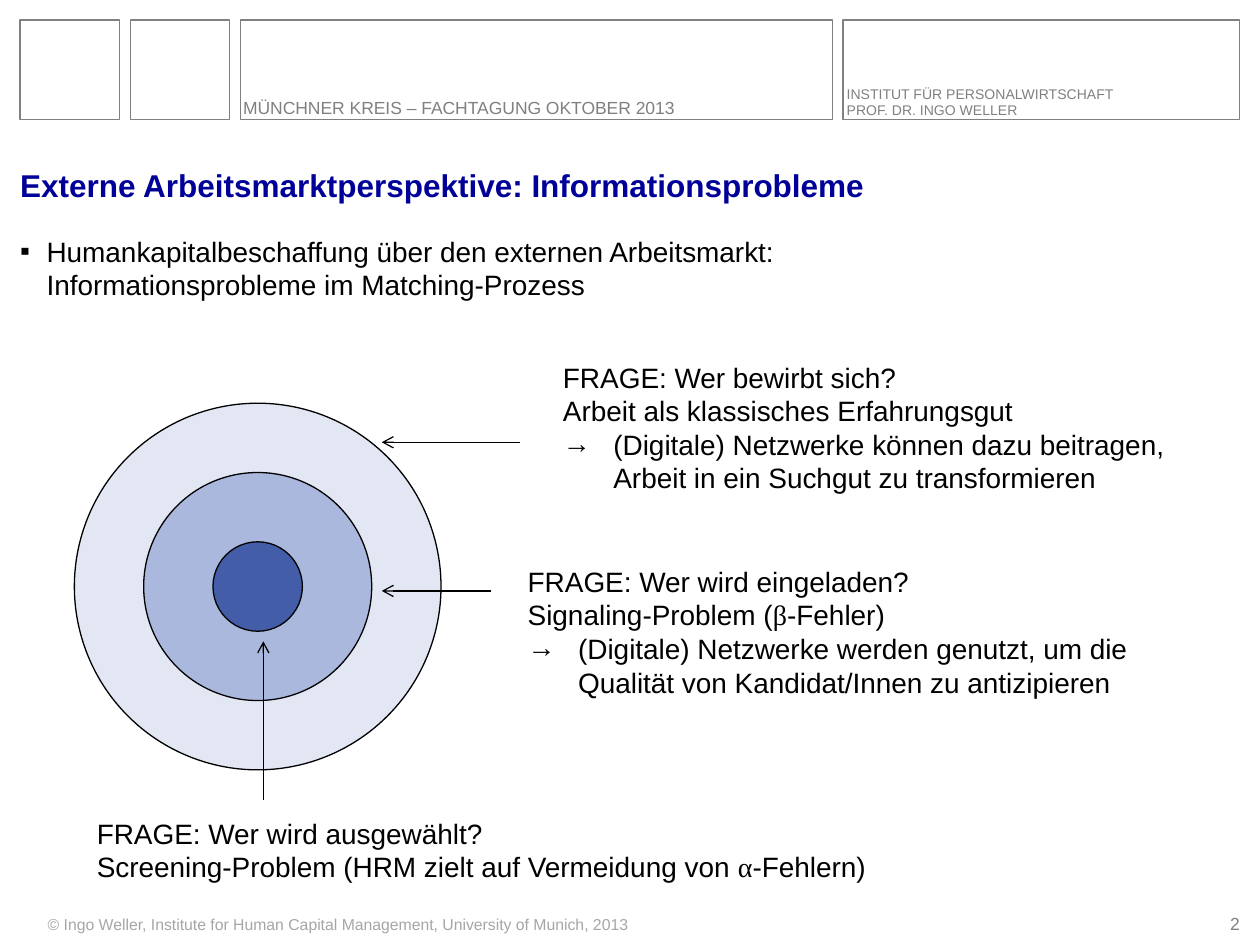
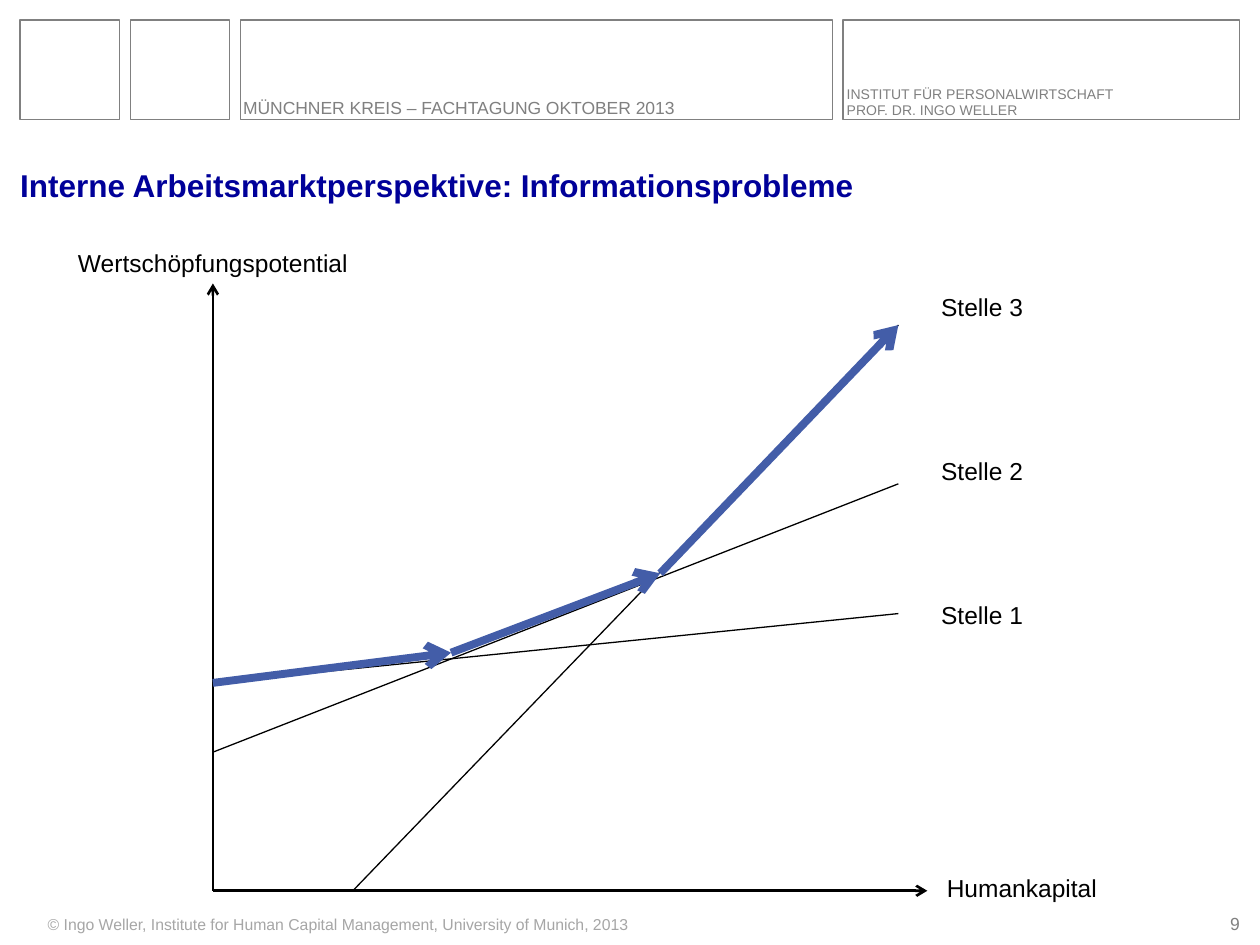
from dataclasses import dataclass
from itertools import groupby

from lxml import etree
from pptx import Presentation
from pptx.dml.color import RGBColor
from pptx.enum.shapes import MSO_CONNECTOR, MSO_SHAPE
from pptx.enum.text import MSO_ANCHOR, MSO_AUTO_SIZE, PP_ALIGN
from pptx.oxml.ns import qn
from pptx.presentation import Presentation as Deck
from pptx.shapes.base import BaseShape
from pptx.slide import Slide
from pptx.util import Inches, Pt

COLS, ROWS = 100, 75
UNIT = Inches(0.1)
EDGE = 1.6
WIDE = COLS - 2 * EDGE
TILE = 7.9
BAND = (TILE, TILE, 47, 31.5)
GAP = (WIDE - sum(BAND)) / (len(BAND) - 1)

BLACK = RGBColor(0x00, 0x00, 0x00)
GREY = RGBColor(0x80, 0x80, 0x80)
PALE = RGBColor(0xA6, 0xA6, 0xA6)
NAVY = RGBColor(0x00, 0x00, 0x99)
BLUE = RGBColor(0x43, 0x5D, 0xA8)
RINGS = (RGBColor(0xE3, 0xE7, 0xF4), RGBColor(0xAA, 0xB8, 0xDD), BLUE)

FONT, GREEK_FONT, GREEK = "Arial", "Times New Roman", "αβ"
RECT, OVAL = MSO_SHAPE.RECTANGLE, MSO_SHAPE.OVAL
STRAIGHT = MSO_CONNECTOR.STRAIGHT
TOP, BOTTOM = MSO_ANCHOR.TOP, MSO_ANCHOR.BOTTOM
LEFT, CENTER, RIGHT = PP_ALIGN.LEFT, PP_ALIGN.CENTER, PP_ALIGN.RIGHT
NO_FIT = MSO_AUTO_SIZE.NONE

Point = tuple[float, float]


@dataclass(frozen=True)
class Box:
    """A place on the grid, in columns and rows."""
    left: float
    top: float
    width: float
    height: float


@dataclass(frozen=True)
class Para:
    """A paragraph with an optional hanging indent and bullet."""
    text: str
    hang: float = 0
    mark: str = ""


@dataclass(frozen=True)
class Style:
    """The look of a text block."""
    size: float
    color: RGBColor = BLACK
    bold: bool = False
    align: PP_ALIGN = LEFT
    anchor: MSO_ANCHOR = TOP
    pad: bool = True
    space: float = 1.0


@dataclass(frozen=True)
class Line:
    """A straight line, with or without an arrowhead."""
    start: Point
    end: Point
    width: float = 0.75
    color: RGBColor = BLACK
    arrow: bool = True


TITLE = Style(18, NAVY, bold=True, anchor=BOTTOM, pad=False)
EVENT = Style(10, GREY, anchor=BOTTOM, pad=False, space=0.95)
CHAIR = Style(8, GREY, anchor=BOTTOM, pad=False, space=0.95)
NUMBER = Style(10, GREY, align=RIGHT, anchor=BOTTOM, pad=False)
CREDIT = Style(9, PALE)
BODY = Style(16, pad=False)
NOTE = Style(16)
LABEL = Style(14, align=CENTER)


def grid(*cells: float) -> list[int]:
    """Turn grid cells into lengths."""
    return [round(cell * UNIT) for cell in cells]


def place(box: Box) -> list[int]:
    """Give the lengths of a box."""
    return grid(box.left, box.top, box.width, box.height)


def write(shape: BaseShape, paras: list[Para], style: Style) -> None:
    """Fill a shape with styled paragraphs."""
    frame = shape.text_frame
    frame.word_wrap = True
    frame.auto_size = NO_FIT
    frame.vertical_anchor = style.anchor
    if not style.pad:
        frame.margin_left = frame.margin_right = 0
        frame.margin_top = frame.margin_bottom = 0
    for num, para in enumerate(paras):
        item = frame.add_paragraph() if num else frame.paragraphs[0]
        item.alignment = style.align
        item.line_spacing = style.space
        props = item._p.get_or_add_pPr()
        if para.hang:
            hang, = grid(para.hang)
            props.set("marL", str(hang))
            props.set("indent", str(-hang))
        if para.mark:
            etree.SubElement(props, qn("a:buFont"), typeface=FONT)
            etree.SubElement(props, qn("a:buChar"), char=para.mark)
        parts = ["".join(part) for _, part in groupby(para.text, lambda sign: sign in GREEK)]
        item.text = parts[0]
        for part in parts[1:]:
            item.add_run().text = part
        for run in item.runs:
            font = run.font
            font.name = GREEK_FONT if run.text in GREEK else FONT
            font.size = Pt(style.size)
            font.bold = style.bold
            font.color.rgb = style.color


def add_text(slide: Slide, box: Box, style: Style, *paras: Para) -> None:
    """Place a text box."""
    write(slide.shapes.add_textbox(*place(box)), list(paras), style)


def add_form(slide: Slide, kind: MSO_SHAPE, box: Box, edge: RGBColor,
             fill: RGBColor | None = None) -> None:
    """Place an outlined shape."""
    form = slide.shapes.add_shape(kind, *place(box))
    form.shadow.inherit = False
    form.line.color.rgb = edge
    form.line.width = Pt(0.75)
    if fill is None:
        form.fill.background()
    else:
        form.fill.solid()
        form.fill.fore_color.rgb = fill


def add_line(slide: Slide, line: Line) -> None:
    """Place a straight line."""
    wire = slide.shapes.add_connector(STRAIGHT, *grid(*line.start, *line.end))
    wire.line.color.rgb = line.color
    wire.line.width = Pt(line.width)
    if line.arrow:
        etree.SubElement(wire.line._get_or_add_ln(), qn("a:tailEnd"), type="arrow")
    etree.SubElement(wire._element.spPr, qn("a:effectLst"))


def add_page(deck: Deck, title: str, number: str) -> Slide:
    """Add a slide with title, header band and footer."""
    slide = deck.slides.add_slide(deck.slide_layouts[5])
    head = slide.shapes.title
    head.left, head.top, head.width, head.height = grid(EDGE, 10.4, WIDE, 5.8)
    write(head, [Para(title)], TITLE)
    left = EDGE
    for width in BAND:
        add_form(slide, RECT, Box(left, EDGE, width, TILE), GREY)
        left += width + GAP
    add_text(slide, Box(19.3, 3.6, 45.6, 5.8), EVENT,
             Para("MÜNCHNER KREIS – FACHTAGUNG OKTOBER 2013"))
    add_text(slide, Box(67.2, 4.8, 26, 4.6), CHAIR,
             Para("INSTITUT FÜR PERSONALWIRTSCHAFT"), Para("PROF. DR. INGO WELLER"))
    add_text(slide, Box(2.8, 72.1, 53.5, 2.5), CREDIT,
             Para("© Ingo Weller, Institute for Human Capital Management, "
                  "University of Munich, 2013"))
    add_text(slide, Box(95.6, 72.4, 2.8, 1.7), NUMBER, Para(number))
    return slide


def add_match(deck: Deck) -> None:
    """Build the slide on the external labour market."""
    slide = add_page(deck, "Externe Arbeitsmarktperspektive: Informationsprobleme", "2")
    add_text(slide, Box(EDGE, 18.6, WIDE, 6), BODY,
             Para("Humankapitalbeschaffung über den externen Arbeitsmarkt:\n"
                  "Informationsprobleme im Matching-Prozess", 2.1, "▪"))
    mid_x, mid_y = 20.45, 46.55
    for step, fill in enumerate(RINGS):
        size = 29.1 - 11 * step
        add_form(slide, OVAL, Box(mid_x - size / 2, mid_y - size / 2, size, size), BLACK, fill)
    for start, end in (((41.3, 35.1), (30.3, 35.1)),
                       ((39, 46.9), (30.3, 46.9)),
                       ((20.9, 63.5), (20.9, 50.9))):
        add_line(slide, Line(start, end))
    add_text(slide, Box(43.7, 28.1, 51.6, 11.8), NOTE,
             Para("FRAGE: Wer bewirbt sich?"),
             Para("Arbeit als klassisches Erfahrungsgut", 4),
             Para("(Digitale) Netzwerke können dazu beitragen, "
                  "Arbeit in ein Suchgut zu transformieren", 4, "→"))
    add_text(slide, Box(40.9, 44.3, 56.3, 11.8), NOTE,
             Para("FRAGE: Wer wird eingeladen?"),
             Para("Signaling-Problem (β-Fehler)", 4),
             Para("(Digitale) Netzwerke werden genutzt, um die "
                  "Qualität von Kandidat/Innen zu antizipieren", 4, "→"))
    add_text(slide, Box(6.7, 64.3, 64.6, 6.4), NOTE,
             Para("FRAGE: Wer wird ausgewählt?"),
             Para("Screening-Problem (HRM zielt auf Vermeidung von α-Fehlern)", 4))


def add_jobs(deck: Deck) -> None:
    """Build the slide on the internal labour market."""
    slide = add_page(deck, "Interne Arbeitsmarktperspektive: Informationsprobleme", "9")
    left, base, right = 16.9, 70.7, 71.3
    for end in ((left, 22.5), (73.6, base)):
        add_line(slide, Line((left, base), end, 1.5))
    add_text(slide, Box(4.3, 19.2, 25.2, 3.4), LABEL, Para("Wertschöpfungspotential"))
    add_text(slide, Box(69.7, 68.8, 22.8, 3.4), LABEL, Para("Humankapital"))
    jobs = (((left, 54.2), 48.7, 47.1), ((left, 59.7), 38.4, 35.7), ((28, base), 25.8, 22.7))
    for num, (start, peak, top) in enumerate(jobs, 1):
        add_line(slide, Line(start, (right, peak), arrow=False))
        add_text(slide, Box(68.1, top, 19.7, 3.4), LABEL, Para(f"Stelle {num}"))
    stops = ((left, 54.2), (35.8, 51.8), (52.4, 45.5), (right, 25.8))
    for start, end in zip(stops, stops[1:]):
        add_line(slide, Line(start, end, 4.5, BLUE))


def main() -> None:
    """Build and save the deck."""
    deck = Presentation()
    deck.slide_width, deck.slide_height = grid(COLS, ROWS)
    add_match(deck)
    add_jobs(deck)
    deck.save("out.pptx")


if __name__ == "__main__":
    main()
